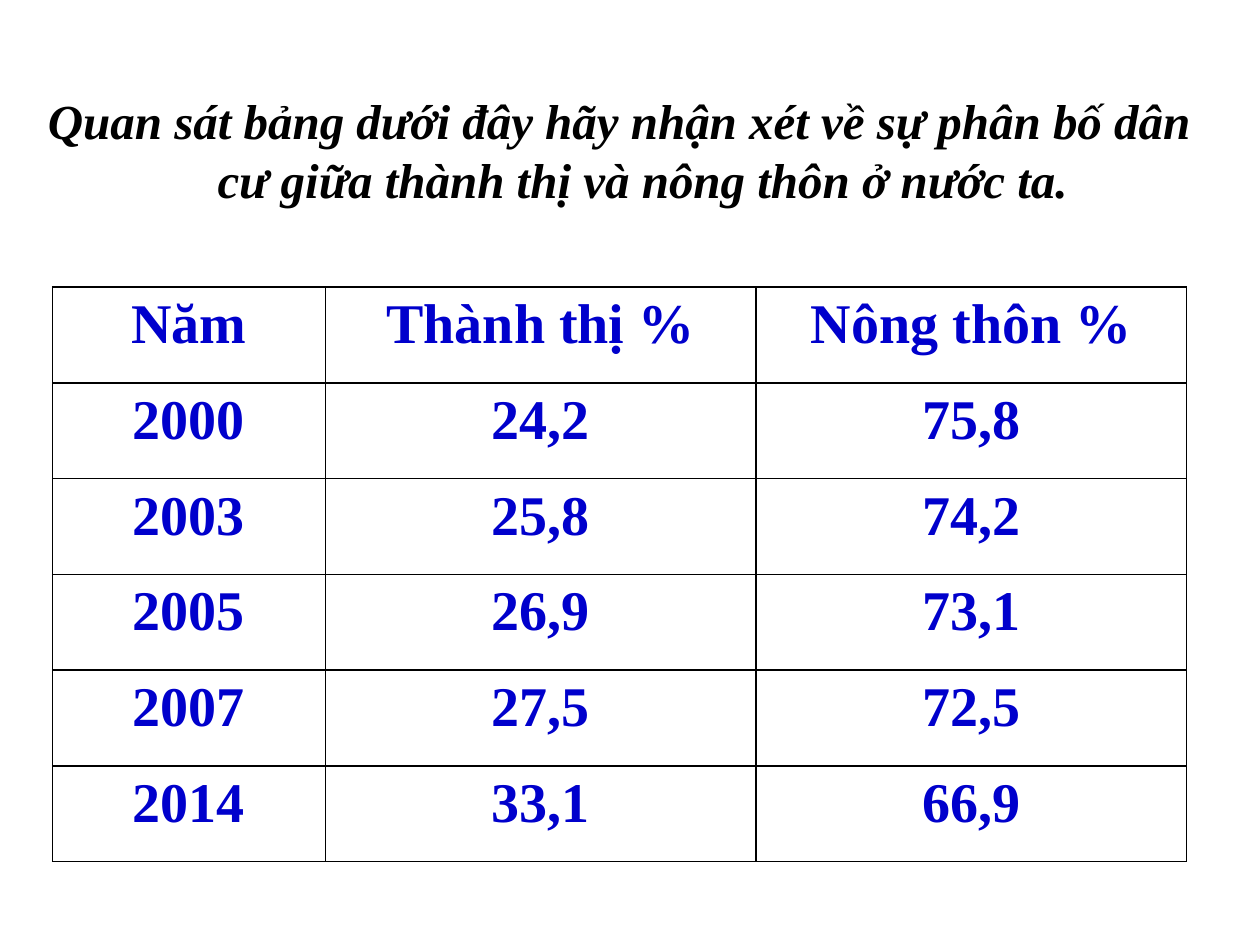
import pptx
import pptx.dml.color
import pptx.enum.text
import pptx.oxml
import pptx.oxml.ns
import pptx.util
from pptx.util import Cm

COLORS = {"text": "000000", "table": "0000CC", "border": "000000"}
FONT = "Times New Roman"
TITLE = ("Quan sát bảng dưới đây hãy nhận xét về sự phân bố dân cư "
         "giữa thành thị và nông thôn ở nước ta.")
ROWS = [
    ("Năm", "Thành thị %", "Nông thôn %"),
    ("2000", "24,2", "75,8"),
    ("2003", "25,8", "74,2"),
    ("2005", "26,9", "73,1"),
    ("2007", "27,5", "72,5"),
    ("2014", "33,1", "66,9"),
]
COLUMN_WIDTHS = [Cm(5.5), Cm(8.68), Cm(8.68)]
ROW_HEIGHT = Cm(1.93)
HANGING = Cm(0.95)


def write_text(tf, text, size, color, italic=False):
    tf.text = text
    p = tf.paragraphs[0]
    p.alignment = pptx.enum.text.PP_ALIGN.CENTER
    pPr = p._p.get_or_add_pPr()
    pPr.set("marL", str(HANGING))
    pPr.set("indent", str(-HANGING))
    font = p.runs[0].font
    font.name = FONT
    font.size = pptx.util.Pt(size)
    font.bold = True
    font.italic = italic
    font.color.rgb = pptx.dml.color.RGBColor.from_string(COLORS[color])
    return p


def add_title(s):
    sp = s.shapes.add_textbox(Cm(0.2), Cm(1.7), Cm(24.56), Cm(2.97))
    tf = sp.text_frame
    tf.word_wrap = True
    p = write_text(tf, TITLE, 28, "text", italic=True)
    p.space_before = pptx.util.Pt(5.6)


def set_borders(cell):
    tcPr = cell._tc.get_or_add_tcPr()
    for i, side in enumerate("LRTB"):
        line = pptx.oxml.parse_xml(
            f'<a:ln{side} {pptx.oxml.ns.nsdecls("a")} w="{pptx.util.Pt(1)}">'
            f'<a:solidFill><a:srgbClr val="{COLORS["border"]}"/></a:solidFill>'
            f'</a:ln{side}>')
        tcPr.insert(i, line)


def add_population_table(s):
    frame = s.shapes.add_table(
        len(ROWS), len(COLUMN_WIDTHS), Cm(1.06), Cm(5.79),
        sum(COLUMN_WIDTHS), ROW_HEIGHT * len(ROWS))
    table = frame.table
    table.first_row = False
    table.horz_banding = False
    for column, width in zip(table.columns, COLUMN_WIDTHS):
        column.width = width
    for row, values in zip(table.rows, ROWS):
        row.height = ROW_HEIGHT
        for cell, value in zip(row.cells, values):
            cell.fill.background()
            set_borders(cell)
            write_text(cell.text_frame, value, 32, "table")


def main():
    prs = pptx.Presentation()
    prs.slide_width = Cm(25.4)
    prs.slide_height = Cm(19.05)
    s = prs.slides.add_slide(prs.slide_layouts[6])
    add_population_table(s)
    add_title(s)
    prs.save("out.pptx")


if __name__ == "__main__":
    main()
